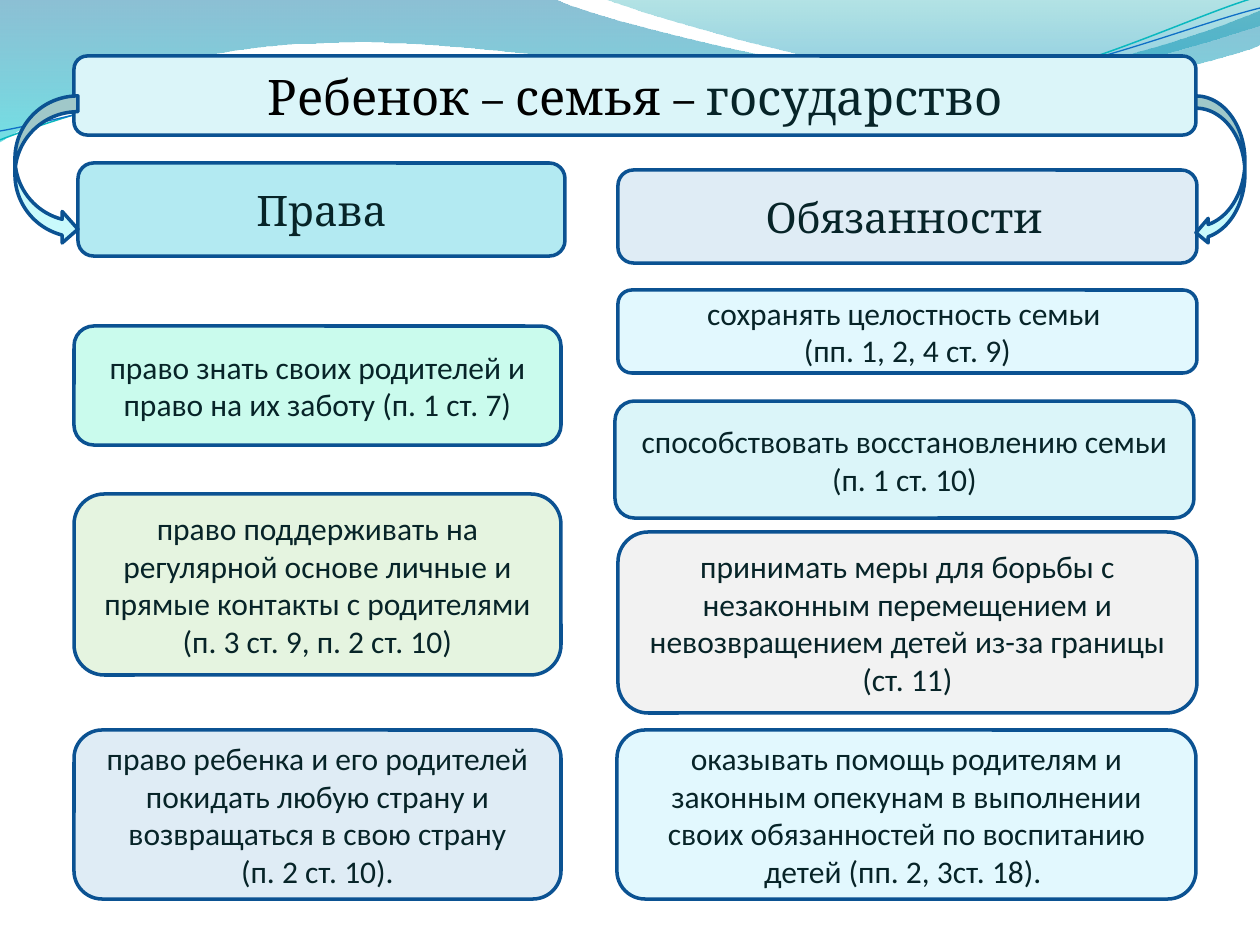
import math

from lxml import etree
from pptx import Presentation, util as u
from pptx.dml.color import RGBColor
from pptx.enum import shapes, text
from pptx.oxml.ns import qn

PX = 914400 / 126
TILT = 2.7
COLORS = {
    "ink": "072428", "black": "000000", "border": "0B5292",
    "title": "DBF5F9", "rights": "B3EAF2", "duties": "DFECF5",
    "mint": "CAFBED", "green": "E5F4E0", "sky": "E2F8FE",
    "grey": "F2F2F2", "arrow": "C9FAFC",
    "deep": "0074A1", "cyan": "00C6CF", "teal": "00A1A9", "blue": "008BBF",
    "line_teal": "0AB8BF", "line_blue": "0F6FC6",
}


def px(n):
    return round(n * PX)


def rgb(name):
    return RGBColor.from_string(COLORS[name])


def turn(point, pivot, degrees):
    """Turn a point clockwise about a pivot."""
    a = math.radians(degrees)
    dx, dy = point[0] - pivot[0], point[1] - pivot[1]
    return (pivot[0] + dx * math.cos(a) - dy * math.sin(a),
            pivot[1] + dx * math.sin(a) + dy * math.cos(a))


class Deck:
    def __init__(self):
        self.prs = Presentation()
        self.prs.slide_width, self.prs.slide_height = px(1260), px(945)
        self.s = self.prs.slides.add_slide(self.prs.slide_layouts[6])

    def outline(self, start, segments, close):
        """Draw segments: one point is a line, three points a Bezier curve."""
        builder = self.s.shapes.build_freeform(px(start[0]), px(start[1]), scale=1.0)
        builder.add_line_segments([(px(x), px(y)) for seg in segments for x, y in seg],
                                  close=close)
        sp = builder.convert_to_shape()
        sp.shadow.inherit = False
        nodes = iter(list(sp._element.iter(qn("a:lnTo"))))
        for seg in segments:
            group = [next(nodes) for point in seg]
            if len(group) == 3:
                group[0].tag = qn("a:cubicBezTo")
                for node in group[1:]:
                    group[0].append(node[0])
                    node.getparent().remove(node)
        return sp

    def wave(self, start, segments, stops):
        sp = self.outline(start, segments, True)
        sp.line.fill.background()
        sp.fill.gradient()
        sp.fill.gradient_angle = 270
        for stop, (color, opacity) in zip(sp.fill.gradient_stops, stops):
            stop.color.rgb = rgb(color)
        for node, (color, opacity) in zip(sp._element.iter(qn("a:gs")), stops):
            etree.SubElement(node[0], qn("a:alpha"), val=str(opacity * 1000))

    def strand(self, pivot, start, segments, color, width):
        """A thin curve, laid level and then tilted about its centre."""
        level = [[turn(p, pivot, TILT) for p in seg] for seg in segments]
        sp = self.outline(turn(start, pivot, TILT), level, False)
        sp.rotation = 360 - TILT
        sp.fill.background()
        sp.line.color.rgb = rgb(color)
        sp.line.width = u.Pt(width)

    def shape(self, kind, box, fill):
        sp = self.s.shapes.add_shape(kind, *map(px, box))
        sp.shadow.inherit = False
        sp.fill.solid()
        sp.fill.fore_color.rgb = rgb(fill)
        sp.line.color.rgb = rgb("border")
        sp.line.width = u.Pt(2)
        return sp

    def card(self, box, fill, *lines, font="Calibri", size=18):
        """Rounded box; each line is a string or a list of (text, colour, size) runs."""
        sp = self.shape(shapes.MSO_SHAPE.ROUNDED_RECTANGLE, box, fill)
        tf = sp.text_frame
        tf.word_wrap = True
        tf.vertical_anchor = text.MSO_ANCHOR.MIDDLE
        for i, line in enumerate(lines):
            p = tf.add_paragraph() if i else tf.paragraphs[0]
            p.alignment = text.PP_ALIGN.CENTER
            p.font.name = font
            runs = [(line, "ink", size)] if isinstance(line, str) else line
            for words, color, points in runs:
                r = p.add_run()
                r.text = words
                r.font.name, r.font.size = font, u.Pt(points)
                r.font.color.rgb = rgb(color)


def main():
    deck = Deck()

    # Waves across the top
    deck.wave((0, 0), [[(554, -1)],
                       [(600, 21), (837, 79), (955, 79)],
                       [(1075, 79), (1207, 33), (1260, 11)],
                       [(1261, 45)],
                       [(1239, 55), (1096, 96), (940, 95)],
                       [(784, 95), (481, 35), (324, 43)],
                       [(163, 45), (58, 105), (-1, 142)]],
              [("deep", 45), ("cyan", 55)])
    deck.wave((604, -1), [[(641, 14), (859, 78), (969, 82)],
                          [(1078, 87), (1211, 40), (1260, 26)],
                          [(1260, 0)]],
              [("teal", 30), ("blue", 45)])
    deck.strand((629, 72), (0, 140),
                [[(60, 117), (199, 72), (349, 66)],
                 [(498, 59), (747, 112), (898, 101)],
                 [(1050, 89), (1182, 19), (1257, -3)]], "line_teal", 0.85)
    deck.strand((629, 74), (0, 131),
                [[(59, 121), (207, 77), (357, 71)],
                 [(508, 64), (752, 106), (903, 94)],
                 [(1053, 84), (1186, 26), (1260, 8)]], "line_blue", 0.75)

    # Title
    deck.card((74, 56, 1122, 79), "title",
              [("Ребенок – семья – ", "black", 28), ("государство", "ink", 28)],
              font="Cambria")

    # Rights: top, height, fill, lines
    rights = [
        (326, 119, "mint", "право знать своих родителей и право на их заботу (п. 1 ст. 7)"),
        (494, 181, "green", "право поддерживать на регулярной основе личные и прямые "
                            "контакты с родителями (п. 3 ст. 9, п. 2 ст. 10)"),
        (730, 169, "duties", "право ребенка и его родителей покидать любую страну и "
                             "возвращаться в свою страну", " (п. 2 ст. 10). "),
    ]
    for top, height, fill, *lines in rights:
        deck.card((74, top, 487, height), fill, *lines)

    # Column heads
    deck.card((78, 163, 487, 93), "rights", "Права", font="Cambria", size=24)
    deck.card((618, 170, 579, 93), "duties",
              [("Обязанности", "ink", 24), (" ", "ink", 18)], font="Cambria")

    # Duties: left, top, height, fill, lines
    duties = [
        (618, 290, 83, "sky", "сохранять целостность семьи ", "(пп. 1, 2, 4 ст. 9)"),
        (615, 401, 117, "title", "способствовать восстановлению семьи (п. 1 ст. 10)"),
        (618, 532, 181, "grey", "принимать меры для борьбы с незаконным перемещением и "
                                "невозвращением детей из-за границы (ст. 11)"),
        (617, 730, 169, "sky", "оказывать помощь родителям и законным опекунам в выполнении "
                               "своих обязанностей по воспитанию детей (пп. 2, 3ст. 18). "),
    ]
    for left, top, height, fill, *lines in duties:
        deck.card((left, top, 579, height), fill, *lines)

    # Arrows from the title to the heads
    deck.shape(shapes.MSO_SHAPE.CURVED_RIGHT_ARROW, (15, 96, 63, 149), "arrow")
    deck.shape(shapes.MSO_SHAPE.CURVED_LEFT_ARROW, (1196, 96, 49, 149), "arrow")

    deck.prs.save("out.pptx")


if __name__ == "__main__":
    main()
